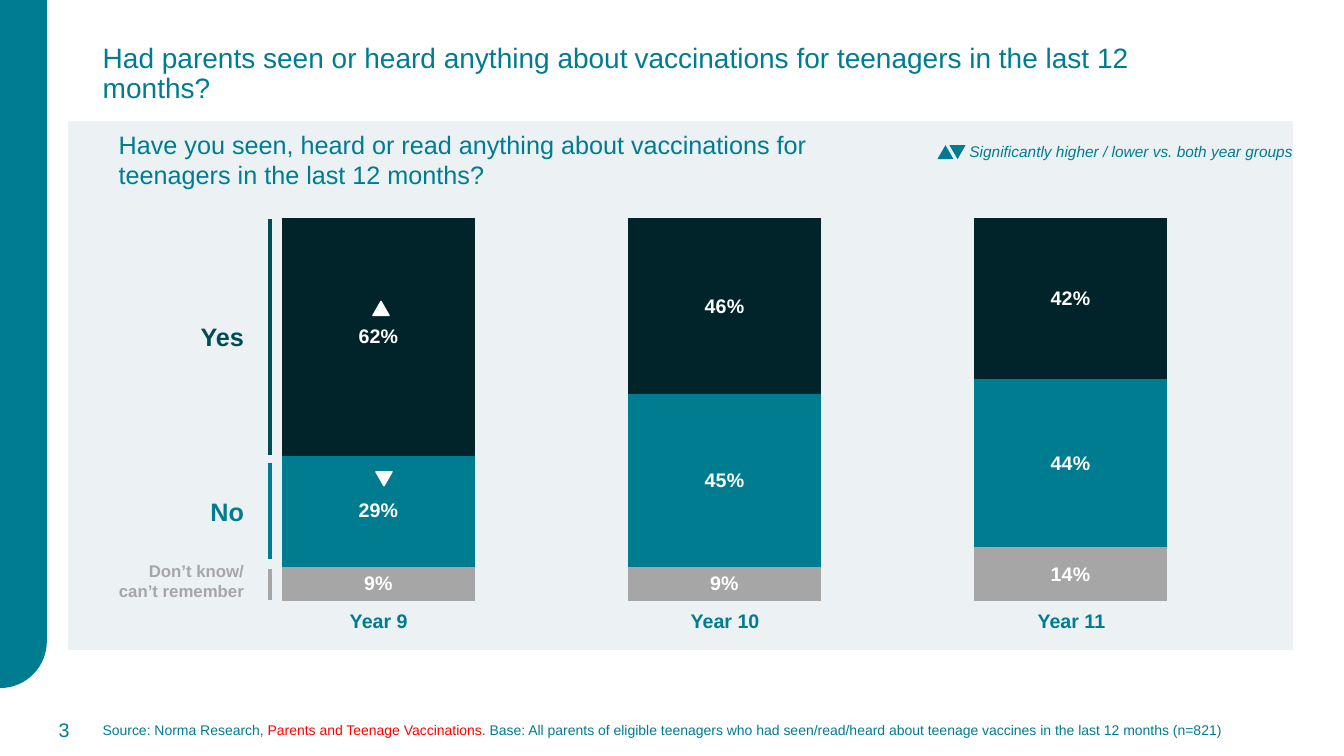
from collections import namedtuple
from math import cos, radians, sin

from lxml import etree
from pptx import Presentation
from pptx.chart.data import CategoryChartData
from pptx.dml.color import RGBColor
from pptx.enum.chart import XL_CHART_TYPE as ChartType, XL_LABEL_POSITION as LabelPosition
from pptx.enum.shapes import MSO_CONNECTOR as Connector, MSO_SHAPE as Shape
from pptx.enum.text import MSO_ANCHOR as Anchor, PP_ALIGN as Align
from pptx.oxml import parse_xml
from pptx.oxml.ns import qn
from pptx.util import Pt

Box = namedtuple("Box", "left top width height")

FONT = "Arial"
TEAL, NAVY, GREY, WHITE = "007C91", "00242A", "A6A6A6", "FFFFFF"
YEARS = ["Year 9", "Year 10", "Year 11"]
ANSWERS = [
    ("Series 1", NAVY, (0.62, 0.46, 0.42)),
    ("Series 2", TEAL, (0.29, 0.45, 0.44)),
    ("Series 3", GREY, (0.09, 0.09, 0.14)),
]
# Answer label, size, colour, top of label, top and bottom of its bracket
BRACKETS = [
    ("Yes", 18, "004B58", 140.4, 70.6, 239),
    ("No", 18, TEAL, 265, 244.8, 313.9),
    ("Don’t know/ can’t remember", 12, GREY, 318.2, 320.4, 342.7),
]
NO_GRID_STYLE = "{2D5ABB26-0587-4C30-8999-92F81FD0307C}"
PLOT_LAYOUT = (
    '<c:layout xmlns:c="http://schemas.openxmlformats.org/drawingml/2006/chart">'
    '<c:manualLayout><c:layoutTarget val="inner"/>'
    '<c:xMode val="edge"/><c:yMode val="edge"/><c:x val="0"/><c:y val="0.08"/>'
    '<c:w val="0.999"/><c:h val="0.879"/></c:manualLayout></c:layout>'
)


def color(value):
    return RGBColor.from_string(value)


def points(box):
    return [Pt(value) for value in box]


def inside(box, left, top, width, height):
    return Box(box.left + left, box.top + top, width, height)


def style_font(font, size, hue, bold=False, italic=False):
    font.name, font.size = FONT, Pt(size)
    font.bold, font.italic = bold, italic
    font.color.rgb = color(hue)


def write(frame, runs, align=Align.LEFT, anchor=Anchor.MIDDLE, **style):
    """Fill a text frame with one paragraph of (text, size, colour) runs."""
    frame.word_wrap = True
    frame.vertical_anchor = anchor
    paragraph = frame.paragraphs[0]
    paragraph.alignment = align
    for text, size, hue in runs:
        run = paragraph.add_run()
        run.text = text
        style_font(run.font, size, hue, **style)
    return paragraph


def add_text(slide, box, runs, **options):
    return write(slide.shapes.add_textbox(*points(box)).text_frame, runs, **options)


def paint(shape, fill, line=None, width=1):
    shape.shadow.inherit = False
    shape.fill.solid()
    shape.fill.fore_color.rgb = color(fill)
    if line:
        shape.line.color.rgb = color(line)
        shape.line.width = Pt(width)
    else:
        shape.line.fill.background()


def add_triangle(slide, left, top, fill, line=None, down=False):
    triangle = slide.shapes.add_shape(Shape.ISOSCELES_TRIANGLE,
                                      *points((left, top, 11.5, 10)))
    triangle.rotation = 180 if down else 0
    paint(triangle, fill, line)


def add_side_band(slide, box):
    # Vertical band with a rounded lower right corner
    radius, bottom = box.width, box.top + box.height
    right = box.left + box.width
    arc = [(box.left + radius * cos(radians(angle)),
            bottom - radius + radius * sin(radians(angle))) for angle in range(0, 91, 5)]
    builder = slide.shapes.build_freeform(Pt(box.left), Pt(box.top))
    builder.add_line_segments([(Pt(x), Pt(y)) for x, y in [(right, box.top)] + arc])
    paint(builder.convert_to_shape(), TEAL, TEAL)


def add_title(slide, box):
    title = slide.shapes.title
    title.left, title.top, title.width, title.height = points(box)
    paragraph = write(title.text_frame, [
        ("Had parents seen or heard anything about", 20, TEAL),
        (" ", 16, TEAL),
        ("vaccinations for teenagers in the last 12 months?", 20, TEAL),
    ])
    paragraph.line_spacing = 0.9


def add_footer(slide, box):
    # Page number and source line
    add_text(slide, inside(box, 0, 0, 46.8, box.height), [("3", 14, TEAL)], align=Align.RIGHT)
    add_text(slide, inside(box, 56.2, 0, box.width - 56.2, box.height), [
        ("Source: Norma Research, ", 10, TEAL),
        ("Parents and Teenage Vaccinations", 10, "FF0000"),
        (". Base: All parents of eligible teenagers who had seen/read/heard about "
         "teenage vaccines in the last 12 months (n=821)", 10, TEAL),
    ])


def add_answer_chart(slide, box):
    data = CategoryChartData(number_format="0%")
    data.categories = ["1", "2", "3"]
    for name, _, values in ANSWERS:
        data.add_series(name, values)
    chart = slide.shapes.add_chart(ChartType.COLUMN_STACKED_100, *points(box), data).chart
    chart.has_legend = chart.has_title = False
    style_font(chart.font, 10, "000000")
    chart.category_axis.visible = chart.value_axis.visible = False
    chart.value_axis.has_major_gridlines = False
    chart.value_axis.reverse_order = True
    chart.value_axis.minimum_scale, chart.value_axis.maximum_scale = 0, 1

    plot = chart.plots[0]
    plot.gap_width, plot.overlap, plot.vary_by_categories = 80, 100, False
    for series, (_, hue, _) in zip(plot.series, ANSWERS):
        series.format.fill.solid()
        series.format.fill.fore_color.rgb = color(hue)
        labels = series.data_labels
        labels.show_value = True
        labels.position = LabelPosition.CENTER
        labels.number_format, labels.number_format_is_linked = "0%", False
        style_font(labels.font, 14, WHITE, bold=True)

    # Fixed plot area
    plot_area = chart.element.find(".//" + qn("c:plotArea"))
    for layout in plot_area.findall(qn("c:layout")):
        plot_area.remove(layout)
    plot_area.insert(0, parse_xml(PLOT_LAYOUT))


def add_year_row(slide, box):
    table = slide.shapes.add_table(1, len(YEARS), *points(box)).table
    table.first_row = table.horz_banding = False
    table._tbl.tblPr.find(qn("a:tableStyleId")).text = NO_GRID_STYLE
    for cell, year in zip(table.rows[0].cells, YEARS):
        cell.fill.background()
        cell.margin_left = cell.margin_right = cell.margin_top = Pt(0.7)
        cell.margin_bottom = 0
        cell.vertical_anchor = Anchor.MIDDLE
        cell.text_frame.text = year
        paragraph = cell.text_frame.paragraphs[0]
        paragraph.alignment = Align.CENTER
        style_font(paragraph.runs[0].font, 14, TEAL, bold=True)


def add_brackets(slide, box):
    # Answer labels, each with its vertical line
    for text, size, hue, label_top, line_top, line_bottom in BRACKETS:
        add_text(slide, inside(box, 20.2, label_top, 113, 28.8), [(text, size, hue)],
                 align=Align.RIGHT, anchor=Anchor.BOTTOM, bold=True)
        x = Pt(box.left + 144.7)
        line = slide.shapes.add_connector(Connector.STRAIGHT, x, Pt(box.top + line_top),
                                          x, Pt(box.top + line_bottom))
        line.line.color.rgb = color(hue)
        line.line.width = Pt(3)
        etree.SubElement(line._element.spPr, qn("a:effectLst"))


def add_legend(slide, box):
    paragraph = add_text(
        slide, inside(box, 15.8, 0, box.width - 15.8, box.height),
        [("Significantly higher / lower vs. both year groups", 11, TEAL)], italic=True)
    paragraph.space_before = Pt(2)
    add_triangle(slide, box.left + 8.6, box.top + 2.9, TEAL, down=True)
    add_triangle(slide, box.left, box.top + 2.9, TEAL)


def add_results_panel(slide, box):
    panel = slide.shapes.add_shape(Shape.RECTANGLE, *points(box))
    paint(panel, "ECF1F4", WHITE, 1.5)
    add_answer_chart(slide, inside(box, 98.6, 45.4, 742.3, 311))
    add_year_row(slide, inside(box, 98.6, 342.7, 742.3, 30.2))
    add_brackets(slide, box)
    add_legend(slide, inside(box, 621.4, 15.1, 280.8, 15.1))
    # Significance marks on the Year 9 column
    add_triangle(slide, box.left + 218.2, box.top + 129.6, WHITE, WHITE)
    add_triangle(slide, box.left + 220.3, box.top + 251.3, WHITE, WHITE, down=True)
    add_text(slide, inside(box, 29.5, 2.9, 562.3, 51.1), [
        ("Have you seen, heard or read anything about vaccinations for teenagers "
         "in the last 12 months?", 18, TEAL)], anchor=Anchor.TOP)


def main():
    presentation = Presentation()
    presentation.slide_width, presentation.slide_height = Pt(960), Pt(540)
    slide = presentation.slides.add_slide(presentation.slide_layouts[5])
    add_side_band(slide, Box(0, 0, 33, 491))
    add_title(slide, Box(66.2, 0.7, 828, 104.4))
    add_footer(slide, Box(10, 506.9, 891.4, 28.8))
    add_results_panel(slide, Box(48.2, 85.7, 876.2, 379.4))
    presentation.save("out.pptx")


if __name__ == "__main__":
    main()
